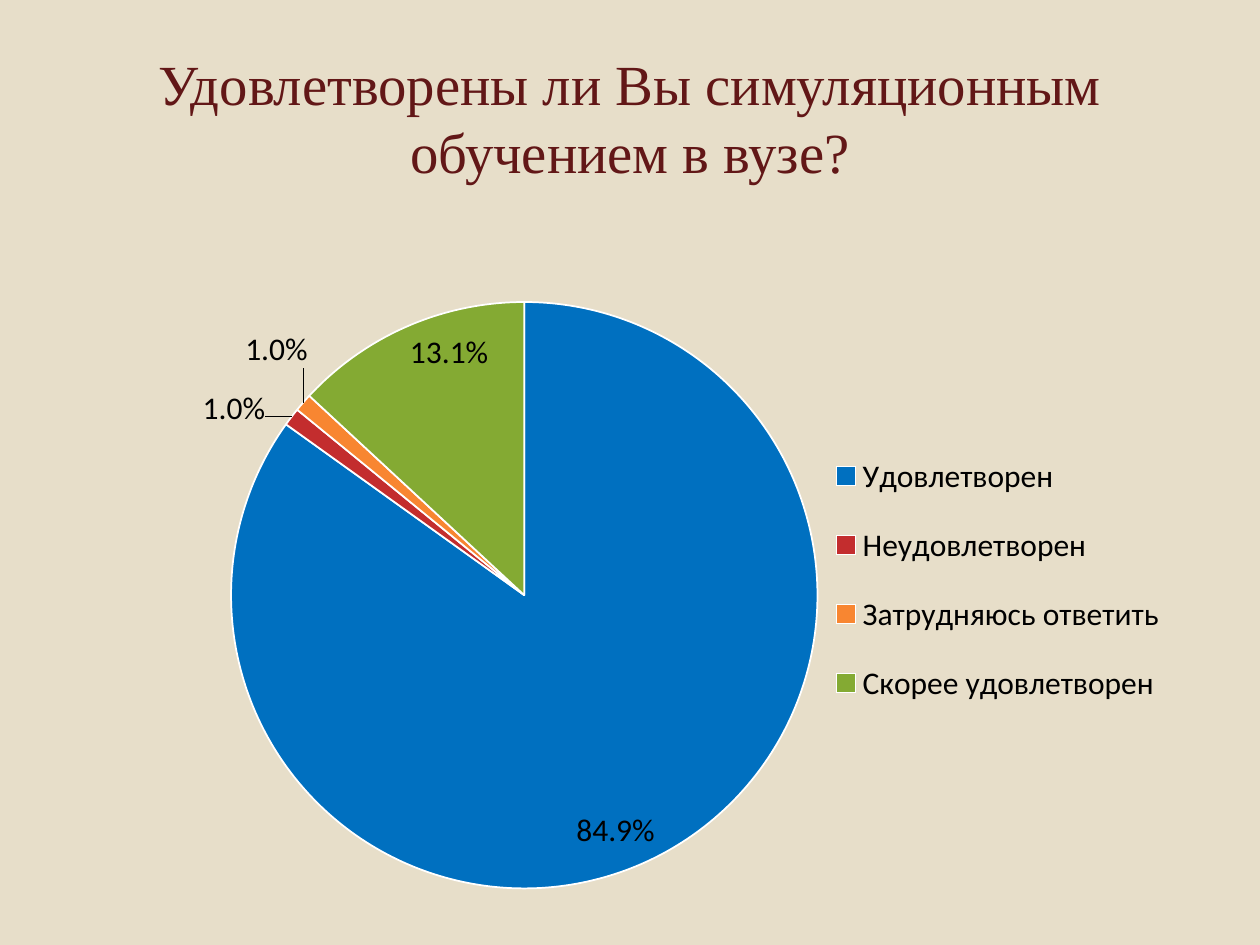
from lxml import etree
from pptx import Presentation
from pptx.chart.data import CategoryChartData
from pptx.dml.color import RGBColor
from pptx.enum.chart import XL_CHART_TYPE, XL_LABEL_POSITION as Position, XL_LEGEND_POSITION
from pptx.enum.text import MSO_ANCHOR, PP_ALIGN
from pptx.oxml.ns import qn
from pptx.util import Inches, Pt

BACKGROUND = RGBColor(0xE7, 0xDE, 0xC9)
MAROON = RGBColor(0x62, 0x17, 0x17)
BLACK = RGBColor(0x00, 0x00, 0x00)
WHITE = RGBColor(0xFF, 0xFF, 0xFF)
BLUE = RGBColor(0x00, 0x70, 0xC0)
RED = RGBColor(0xC3, 0x2D, 0x2E)
ORANGE = RGBColor(0xF8, 0x86, 0x31)
GREEN = RGBColor(0x84, 0xAA, 0x33)

ANSWERS = [
    ("Удовлетворен", 84.9, BLUE, Position.INSIDE_END, None),
    ("Неудовлетворен", 1, RED, Position.OUTSIDE_END, (-0.02, 0.02)),
    ("Затрудняюсь ответить ", 1, ORANGE, Position.OUTSIDE_END, (0.01, -0.04)),
    ("Скорее удовлетворен", 13.1, GREEN, Position.INSIDE_END, None),
]


def make_layout(**values):
    layout = etree.Element(qn("c:layout"))
    manual = etree.SubElement(layout, qn("c:manualLayout"))
    for name, value in values.items():
        etree.SubElement(manual, qn(f"c:{name}")).set("val", str(value))
    return layout


def set_area(element, x, y, width, height, **target):
    for old in element.findall(qn("c:layout")):
        element.remove(old)
    return make_layout(**target, xMode="edge", yMode="edge", x=x, y=y, w=width, h=height)


class SlideBuilder:
    title_font = "Times New Roman"
    chart_font = "Calibri"

    def __init__(self, presentation):
        self.slide = presentation.slides.add_slide(presentation.slide_layouts[5])
        fill = self.slide.background.fill
        fill.solid()
        fill.fore_color.rgb = BACKGROUND

    def title(self, text, left, top, width, height):
        shape = self.slide.shapes.title
        shape.left, shape.top = Inches(left), Inches(top)
        shape.width, shape.height = Inches(width), Inches(height)
        frame = shape.text_frame
        frame.text = text
        frame.word_wrap = True
        frame.vertical_anchor = MSO_ANCHOR.MIDDLE
        paragraph = frame.paragraphs[0]
        paragraph.alignment = PP_ALIGN.CENTER
        paragraph.font.name = self.title_font
        paragraph.font.size = Pt(32.4)
        paragraph.font.color.rgb = MAROON

    def pie(self, answers, left, top, width, height):
        data = CategoryChartData()
        data.categories = [answer[0] for answer in answers]
        data.add_series("Series 1", [answer[1] for answer in answers])
        chart = self.slide.shapes.add_chart(
            XL_CHART_TYPE.PIE, Inches(left), Inches(top), Inches(width), Inches(height), data
        ).chart
        chart.has_title = False
        chart.font.name = self.chart_font
        chart.font.size = Pt(18)
        chart.font.color.rgb = BLACK
        plot = chart.plots[0]
        plot.vary_by_categories = True
        self.legend(chart)
        self.labels(plot.series[0])
        for index, (_, _, color, position, offset) in enumerate(answers):
            self.slice(plot.series[0].points[index], index, color, position, offset)
        plot_area = chart.element.find(".//" + qn("c:plotArea"))
        plot_area.insert(0, set_area(plot_area, 0.056, 0.12, 0.574, 0.803, layoutTarget="inner"))

    def legend(self, chart):
        chart.has_legend = True
        chart.legend.position = XL_LEGEND_POSITION.RIGHT
        chart.legend.include_in_layout = False
        element = chart.element.find(".//" + qn("c:legend"))
        area = set_area(element, 0.63, 0.29, 0.36, 0.42)
        element.find(qn("c:legendPos")).addnext(area)

    def labels(self, series):
        labels = series.data_labels
        labels.show_value = False
        labels.show_percentage = True
        labels.number_format = "0.0%"
        labels.number_format_is_linked = False
        element = series.data_labels._element
        for old in element.findall(qn("c:showLeaderLines")):
            element.remove(old)
        etree.SubElement(element, qn("c:showLeaderLines")).set("val", "1")

    def slice(self, point, index, color, position, offset):
        point.format.fill.solid()
        point.format.fill.fore_color.rgb = color
        point.format.line.color.rgb = WHITE
        point.format.line.width = Pt(1)
        point.data_label.position = position
        labels = point._element if hasattr(point, "_element") else point._ser
        label = labels.find(f'.//{qn("c:dLbl")}[{qn("c:idx")}][{index + 1}]')
        label.find(qn("c:showVal")).set("val", "0")
        label.find(qn("c:showPercent")).set("val", "1")
        if offset:
            label.find(qn("c:idx")).addnext(make_layout(x=offset[0], y=offset[1]))


def main():
    presentation = Presentation()
    presentation.slide_width, presentation.slide_height = Inches(10), Inches(7.5)
    builder = SlideBuilder(presentation)
    builder.title("Удовлетворены ли Вы симуляционным обучением в вузе?", 0.5, 0.3, 9, 1.25)
    builder.pie(ANSWERS, 1.38, 1.7, 8.11, 5.8)
    presentation.save("out.pptx")


if __name__ == "__main__":
    main()
